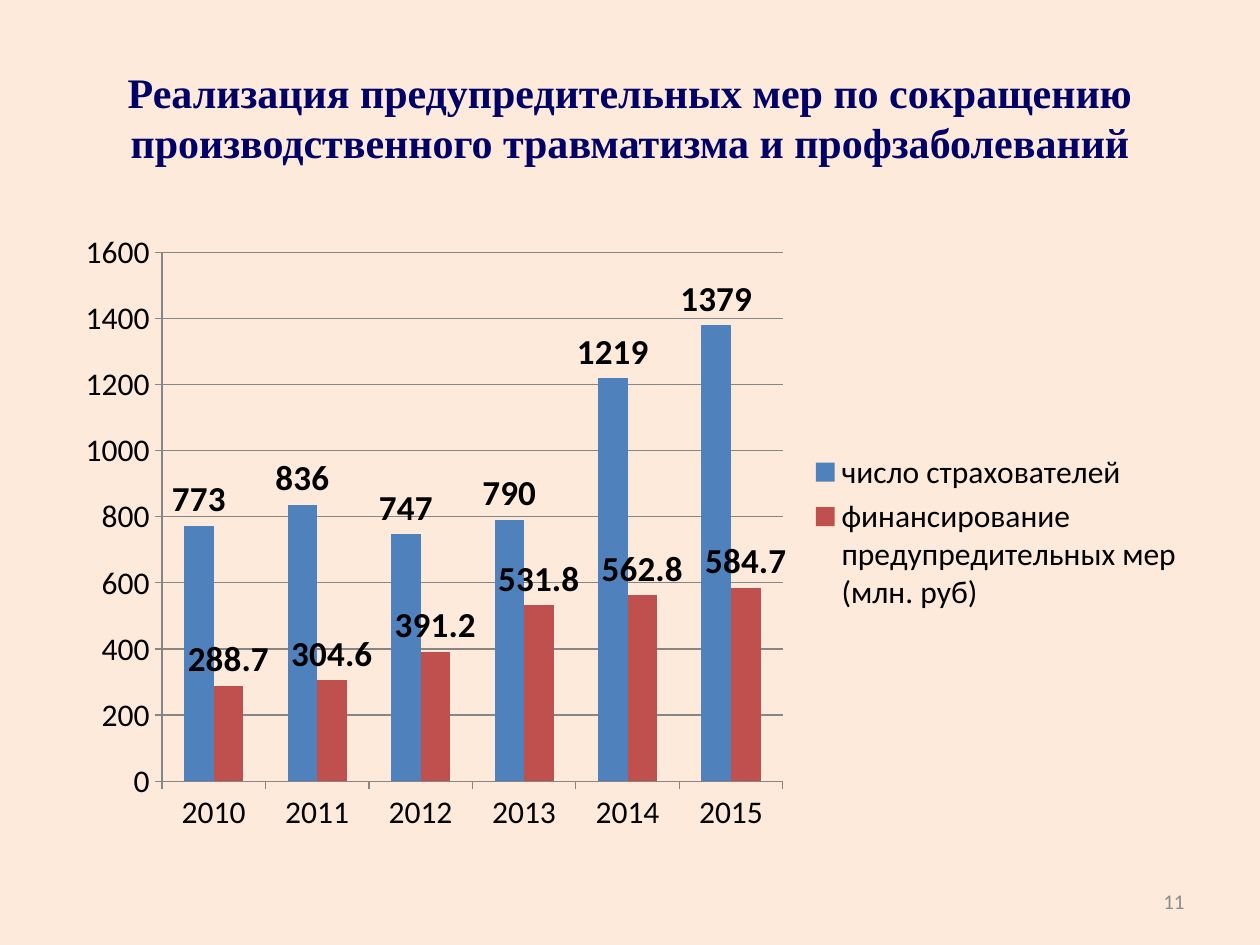
from pptx import Presentation
from pptx.chart.data import CategoryChartData
from pptx.dml.color import RGBColor
from pptx.enum.chart import XL_CHART_TYPE, XL_LABEL_POSITION, XL_LEGEND_POSITION, XL_TICK_MARK
from pptx.enum.text import MSO_ANCHOR, PP_ALIGN
from pptx.util import Cm, Pt

# Content
TITLE = "Реализация предупредительных мер по сокращению производственного травматизма и профзаболеваний"
YEARS = ["2010", "2011", "2012", "2013", "2014", "2015"]
SERIES = [
    ("число страхователей", "blue", (773, 836, 747, 790, 1219, 1379)),
    ("финансирование предупредительных мер (млн. руб)", "red",
     (288.7, 304.6, 391.2, 531.8, 562.8, 584.7)),
]
NUMBER = "11"
COLORS = {"back": "FDEADA", "title": "000066", "text": "000000", "blue": "4F81BD",
          "red": "C0504D", "grid": "868686", "number": "8C8C8C"}
EDGE, WIDE = Cm(1.27), Cm(22.86)


def color(name):
    return RGBColor.from_string(COLORS[name])


def style(font, size, tint, face="Calibri", bold=False):
    font.size, font.name, font.bold = Pt(size), face, bold
    font.color.rgb = color(tint)


def write(shape, text, align):
    frame = shape.text_frame
    frame.word_wrap = True
    frame.vertical_anchor = MSO_ANCHOR.MIDDLE
    para = frame.paragraphs[0]
    para.text, para.alignment = text, align
    return para.font


deck = Presentation()
deck.slide_width, deck.slide_height = Cm(25.4), Cm(19.05)
slide = deck.slides.add_slide(deck.slide_layouts[5])
slide.background.fill.solid()
slide.background.fill.fore_color.rgb = color("back")

# Title
title = slide.shapes.title
title.left, title.top, title.width, title.height = EDGE, Cm(0.76), WIDE, Cm(3.18)
style(write(title, TITLE, PP_ALIGN.CENTER), 24, "title", "Times New Roman", True)

# Chart
data = CategoryChartData()
data.categories = YEARS
for name, _, values in SERIES:
    data.add_series(name, values)
chart = slide.shapes.add_chart(XL_CHART_TYPE.COLUMN_CLUSTERED, EDGE, Cm(4.45),
                               WIDE, Cm(12.57), data).chart
style(chart.font, 18, "text")
chart.has_title = False
chart.has_legend = True
chart.legend.position = XL_LEGEND_POSITION.RIGHT
chart.legend.include_in_layout = False

# Axes and grid
value = chart.value_axis
value.has_major_gridlines = True
value.minimum_scale, value.maximum_scale, value.major_unit = 0, 1600, 200
for axis in (chart.category_axis, value):
    axis.major_tick_mark = XL_TICK_MARK.OUTSIDE
    axis.minor_tick_mark = XL_TICK_MARK.NONE
for part in (chart.category_axis, value, value.major_gridlines):
    part.format.line.color.rgb = color("grid")
    part.format.line.width = Pt(0.75)

# Columns and their labels
plot = chart.plots[0]
plot.gap_width, plot.overlap = 150, 0
plot.vary_by_categories = False
for series, (_, tint, _) in zip(plot.series, SERIES):
    series.format.fill.solid()
    series.format.fill.fore_color.rgb = color(tint)
    labels = series.data_labels
    labels.show_value = True
    labels.position = XL_LABEL_POSITION.OUTSIDE_END
    style(labels.font, 20, "text", bold=True)

# Slide number
box = slide.shapes.add_textbox(Cm(18.2), Cm(17.66), Cm(5.93), Cm(1.01))
style(write(box, NUMBER, PP_ALIGN.RIGHT), 12, "number")

deck.save("out.pptx")
